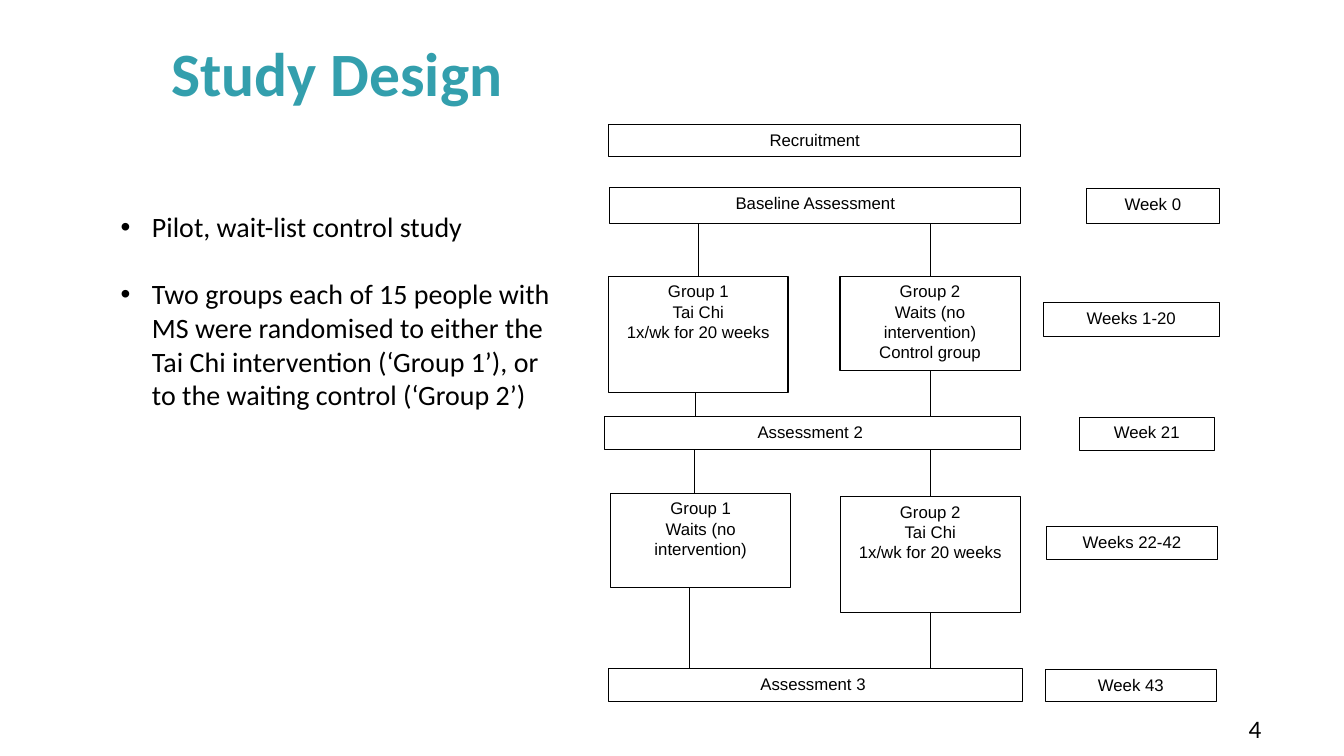
from pptx import Presentation
from pptx.dml.color import RGBColor
from pptx.enum.shapes import MSO_CONNECTOR, MSO_SHAPE
from pptx.enum.text import MSO_ANCHOR, PP_ALIGN
from pptx.oxml.ns import qn
from pptx.util import Cm, Pt
from lxml import etree

RECT = MSO_SHAPE.RECTANGLE
STRAIGHT = MSO_CONNECTOR.STRAIGHT
TOP, CENTER, LEFT = MSO_ANCHOR.TOP, PP_ALIGN.CENTER, PP_ALIGN.LEFT
BLACK, WHITE, TEAL = "000000", "FFFFFF", "339FAD"
TOP_SIDE, BOTTOM_SIDE = 0, 2


def rgb(value):
    return RGBColor.from_string(value)


def add_run(p, text, size, font, color=BLACK, bold=False):
    r = p.add_run()
    r.text = text
    r.font.size = Pt(size)
    r.font.name = font
    r.font.bold = bold
    r.font.color.rgb = rgb(color)


prs = Presentation()
prs.slide_width, prs.slide_height = Cm(33.87), Cm(19.05)
s = prs.slides.add_slide(prs.slide_layouts[5])

# Title
title = s.shapes.title
title.left, title.top, title.width, title.height = Cm(4.06), Cm(0.97), Cm(29.21), Cm(3.68)
tf = title.text_frame
tf.vertical_anchor = TOP
p = tf.paragraphs[0]
p.alignment = LEFT
p.line_spacing = 0.9
add_run(p, "Study Design", 44, "Calibri", TEAL, True)

# Bullets
bullets = [
    "Pilot, wait-list control study",
    "Two groups each of 15 people with MS were randomised to either the "
    "Tai Chi intervention (‘Group 1’), or to the waiting control (‘Group 2’)",
]
tf = s.shapes.add_textbox(Cm(2.79), Cm(5.16), Cm(11.33), Cm(7.7)).text_frame
tf.word_wrap = True
for i, text in enumerate(bullets):
    p = tf.paragraphs[0] if i == 0 else tf.add_paragraph()
    pPr = p._p.get_or_add_pPr()
    pPr.set("marL", str(Cm(0.79)))
    pPr.set("indent", str(-Cm(0.79)))
    etree.SubElement(pPr, qn("a:buFont")).set("typeface", "Arial")
    etree.SubElement(pPr, qn("a:buChar")).set("char", "•")
    if i:
        p.space_before = Pt(24)
    add_run(p, text, 20, "Calibri")

# Flow chart boxes and timeline: key, left, top, width, height, lines
boxes = [
    ("recruitment", 15.34, 3.14, 10.39, 0.81, ["Recruitment"]),
    ("baseline", 15.37, 4.72, 10.36, 0.91, ["Baseline Assessment"]),
    ("group 1 first", 15.34, 6.96, 4.52, 2.94, ["Group 1", "Tai Chi", "1x/wk for 20 weeks"]),
    ("group 2 first", 21.17, 6.96, 4.54, 2.38,
     ["Group 2", "Waits (no intervention)", "Control group"]),
    ("assessment 2", 15.24, 10.5, 10.48, 0.84, ["Assessment 2 "]),
    ("group 1 second", 15.39, 12.43, 4.54, 2.37, ["Group 1", "Waits (no intervention)"]),
    ("group 2 second", 21.18, 12.51, 4.53, 2.93, ["Group 2", "Tai Chi", "1x/wk for 20 weeks"]),
    ("assessment 3", 15.34, 16.84, 10.42, 0.84, ["Assessment 3 "]),
    ("week 0", 27.38, 4.75, 3.35, 0.89, ["Week 0"]),
    ("weeks 1-20", 26.29, 7.62, 4.44, 0.86, ["Weeks 1-20"]),
    ("week 21", 27.2, 10.51, 3.4, 0.84, ["Week 21"]),
    ("weeks 22-42", 26.37, 13.27, 4.32, 0.82, ["Weeks 22-42"]),
    ("week 43", 26.34, 16.87, 4.32, 0.82, ["Week 43"]),
]
placed = {}
for key, left, top, width, height, lines in boxes:
    sp = s.shapes.add_shape(RECT, Cm(left), Cm(top), Cm(width), Cm(height))
    sp.shadow.inherit = False
    sp.fill.solid()
    sp.fill.fore_color.rgb = rgb(WHITE)
    sp.line.color.rgb = rgb(BLACK)
    sp.line.width = Pt(0.75)
    tf = sp.text_frame
    tf.word_wrap = True
    tf.vertical_anchor = TOP
    for i, text in enumerate(lines):
        p = tf.paragraphs[0] if i == 0 else tf.add_paragraph()
        p.alignment = CENTER
        add_run(p, text, 12, "Arial")
    placed[key] = sp

# Connectors: group box, its side, far end, x where it is off the middle
links = [
    ("group 1 first", TOP_SIDE, 5.65, None),
    ("group 2 first", TOP_SIDE, 5.65, None),
    ("group 1 first", BOTTOM_SIDE, 10.5, 17.53),
    ("group 2 first", BOTTOM_SIDE, 10.5, None),
    ("group 1 second", TOP_SIDE, 11.34, 17.5),
    ("group 2 second", TOP_SIDE, 11.34, None),
    ("group 1 second", BOTTOM_SIDE, 16.84, 17.37),
    ("group 2 second", BOTTOM_SIDE, 16.84, None),
]
for key, side, far_y, off_x in links:
    box = placed[key]
    x = Cm(off_x) if off_x else box.left + box.width // 2
    y = box.top if side == TOP_SIDE else box.top + box.height
    line = s.shapes.add_connector(STRAIGHT, x, y, x, Cm(far_y))
    if off_x is None:
        line.begin_connect(box, side)
    line.line.color.rgb = rgb(BLACK)
    line.line.width = Pt(0.75)
    etree.SubElement(line._element.spPr, qn("a:effectLst"))

# Slide number
tf = s.shapes.add_textbox(Cm(31.22), Cm(17.86), Cm(1.27), Cm(1.02)).text_frame
add_run(tf.paragraphs[0], "4", 18, "Calibri")

prs.save("out.pptx")
